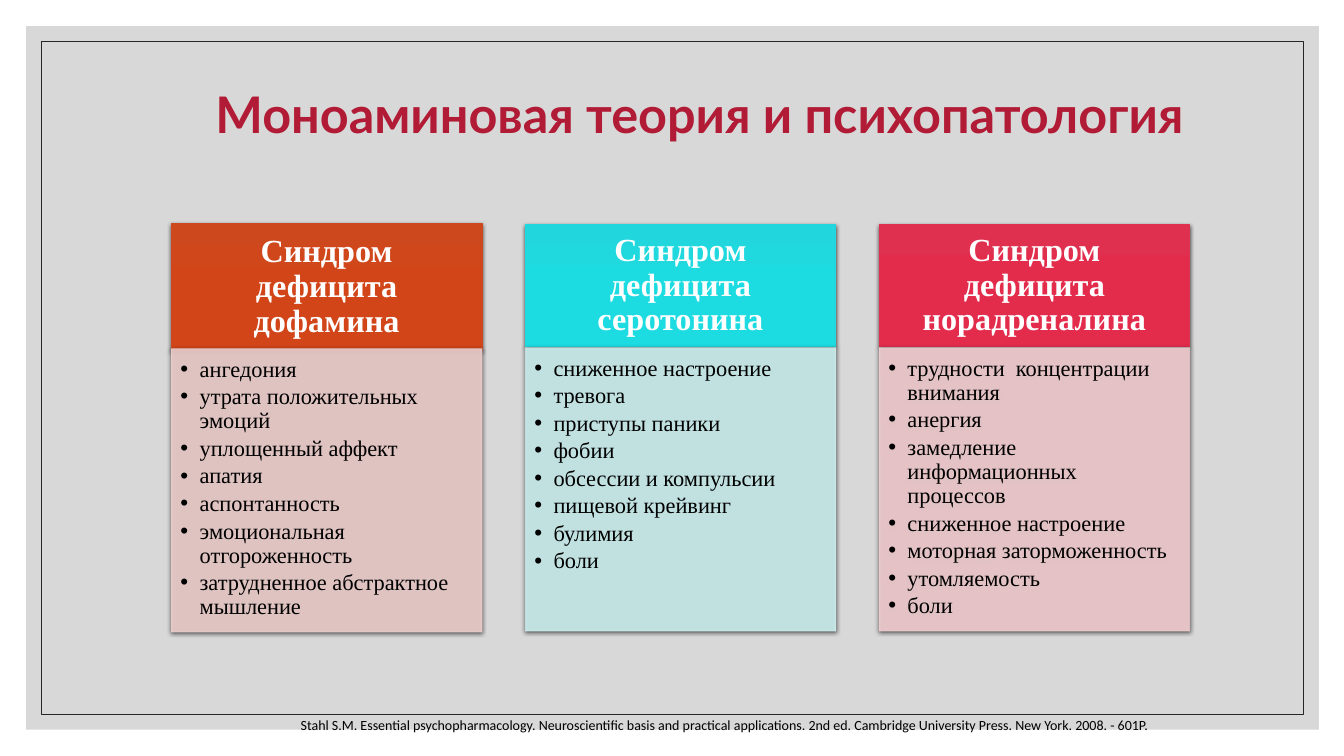
from pptx import Presentation
from pptx.dml.color import RGBColor
from pptx.enum.shapes import MSO_SHAPE as Shape
from pptx.enum.text import MSO_ANCHOR as Anchor, PP_ALIGN as Align
from pptx.oxml.ns import qn
from pptx.util import Pt
from lxml.etree import SubElement

PX = 9144  # 100 px to the inch
SERIF = "Times New Roman"
COLUMN_LEFT, COLUMN_STEP, COLUMN_WIDTH, PANEL_HEIGHT = 170, 351, 308, 281

# heading, gradient start and end, panel colour, top, heading height, symptoms
SYNDROMES = [
    ("Синдром дефицита дофамина", "CE481E", "D14519", "EDCFCD", 222, 126,
     ["ангедония", "утрата положительных эмоций", "уплощенный аффект",
      "апатия", "аспонтанность", "эмоциональная отгороженность",
      "затрудненное абстрактное мышление"]),
    ("Синдром дефицита серотонина", "21D7DD", "1CDBE1", "CDF0F0", 223, 121,
     ["сниженное настроение", "тревога", "приступы паники", "фобии",
      "обсессии и компульсии", "пищевой крейвинг", "булимия", "боли"]),
    ("Синдром дефицита норадреналина", "E0304F", "E32B4C", "F3CED1", 223, 121,
     ["трудности  концентрации внимания", "анергия",
      "замедление информационных процессов", "сниженное настроение",
      "моторная заторможенность", "утомляемость", "боли"]),
]


def px(*lengths):
    return [length * PX for length in lengths]


def color(code):
    return RGBColor.from_string(code)


def write(box, *lines, font, size, ink="000000", bold=False, align=Align.LEFT,
          anchor=Anchor.TOP, insets=(10, 5, 10, 5), spacing=0.9, after=0,
          bullet=False):
    """Fill the box with one paragraph for each line."""
    frame = box.text_frame
    frame.word_wrap = True
    frame.vertical_anchor = anchor
    (frame.margin_left, frame.margin_top,
     frame.margin_right, frame.margin_bottom) = px(*insets)
    for number, line in enumerate(lines):
        para = frame.add_paragraph() if number else frame.paragraphs[0]
        para.alignment = align
        para.line_spacing = spacing
        para.space_after = Pt(after)
        if bullet:
            add_bullet(para, 19)
        span = para.add_run()
        span.text = line
        span.font.name = font
        span.font.size = Pt(size)
        span.font.bold = bold
        span.font.color.rgb = color(ink)


def add_bullet(para, indent):
    props = para._p.get_or_add_pPr()
    props.set("marL", str(indent * PX))
    props.set("indent", str(-indent * PX))
    SubElement(props, qn("a:buFont"), typeface="Arial")
    SubElement(props, qn("a:buChar"), char="•")


def add_text(page, place, *lines, **style):
    write(page.shapes.add_textbox(*px(*place)), *lines, **style)


def add_box(page, place, fill=None, fade=None, line=None, opacity=100,
            shadow=False):
    """Add a rectangle; fade is the lower colour of a vertical gradient."""
    box = page.shapes.add_shape(Shape.RECTANGLE, *px(*place))
    box.shadow.inherit = False
    if fade:
        box.fill.gradient()
        box.fill.gradient_angle = 270
        for stop, code, position in zip(box.fill.gradient_stops,
                                        (fill, fade), (0, 0.5)):
            stop.color.rgb = color(code)
            stop.position = position
    elif fill:
        box.fill.solid()
        box.fill.fore_color.rgb = color(fill)
    else:
        box.fill.background()
    if line:
        box.line.color.rgb = color(line)
        box.line.width = Pt(0.5)
    else:
        box.line.fill.background()
    props = box.element.spPr
    if opacity < 100:
        for node in list(props.iter(qn("a:srgbClr"))):
            SubElement(node, qn("a:alpha"), val=str(opacity * 1000))
    if shadow:
        outer = SubElement(props.find(qn("a:effectLst")), qn("a:outerShdw"),
                           blurRad=str(Pt(3)), dist=str(Pt(1)), dir="5400000",
                           algn="ctr", rotWithShape="0")
        shade = SubElement(outer, qn("a:srgbClr"), val="000000")
        SubElement(shade, qn("a:alpha"), val="63000")
    return box


def add_syndrome(page, left, heading, start, end, tint, top, height, symptoms):
    header = add_box(page, (left, top, COLUMN_WIDTH, height), start, fade=end,
                     line=start, shadow=True)
    write(header, heading, font=SERIF, size=23, ink="FFFFFF", bold=True,
          align=Align.CENTER, anchor=Anchor.MIDDLE, insets=(18, 10, 18, 10))
    panel = add_box(page, (left, top + 124 if height > 121 else top + 122,
                           COLUMN_WIDTH, PANEL_HEIGHT),
                    tint, line=tint, opacity=90, shadow=True)
    write(panel, *symptoms, font=SERIF, size=16, insets=(9, 9, 12, 14),
          after=2.4, bullet=True)


def main():
    deck = Presentation()
    deck.slide_width, deck.slide_height = px(1333, 750)
    page = deck.slides.add_slide(deck.slide_layouts[6])
    add_box(page, (26, 26, 1282, 698), "BFBFBF", opacity=60)
    add_box(page, (41, 41, 1252, 668), line="262626")
    add_text(page, (144, 62, 1100, 96), "Моноаминовая теория и психопатология",
             font="Lato", size=36, ink="B11B35", bold=True,
             align=Align.CENTER, anchor=Anchor.MIDDLE, insets=(0, 12, 0, 0))
    for number, syndrome in enumerate(SYNDROMES):
        add_syndrome(page, COLUMN_LEFT + number * COLUMN_STEP, *syndrome)
    add_text(page, (213, 706, 935, 27),
             "Stahl S.M. Essential psychopharmacology. Neuroscientific basis "
             "and practical applications. 2nd ed. Cambridge University Press. "
             "New York. 2008. - 601P.",
             font="Calibri", size=10, align=Align.RIGHT, spacing=1.0)
    deck.save("out.pptx")


if __name__ == "__main__":
    main()
